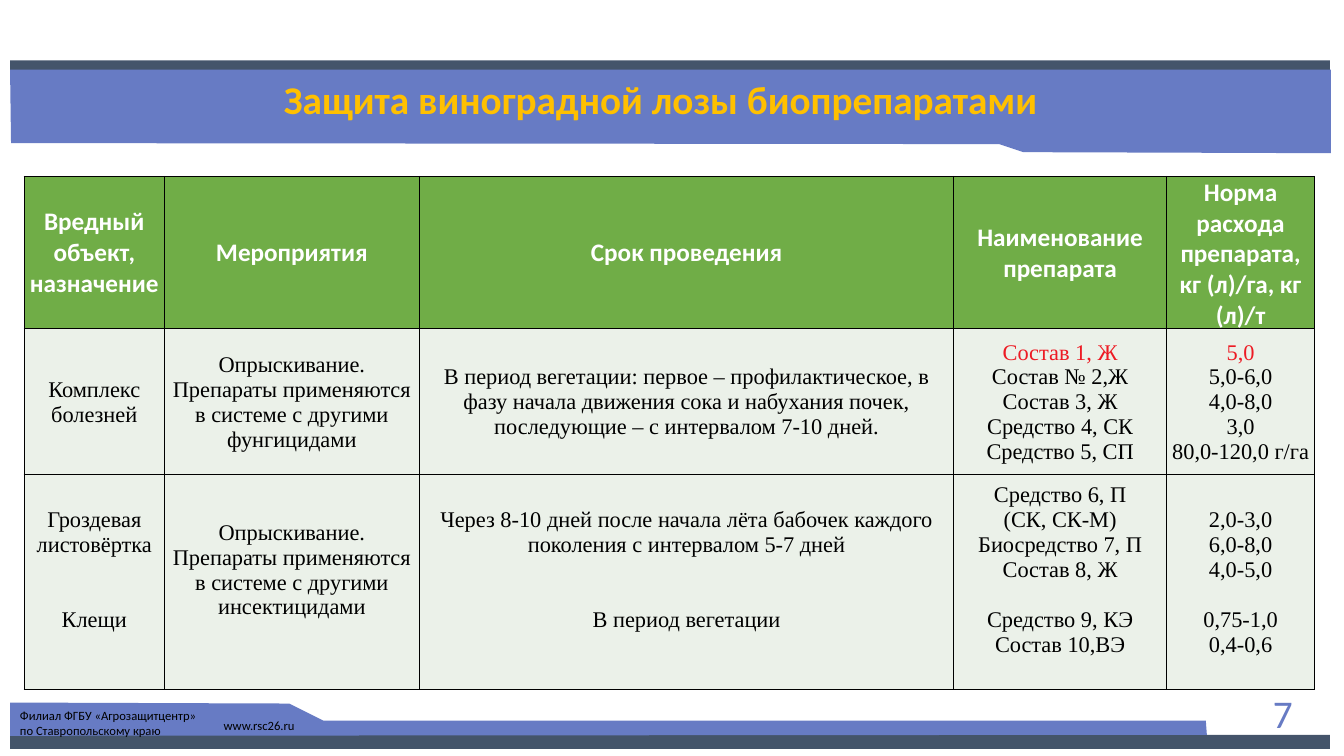
from lxml import etree
from pptx import Presentation
from pptx.dml.color import RGBColor
from pptx.enum.shapes import MSO_SHAPE
from pptx.enum.text import MSO_ANCHOR, PP_ALIGN
from pptx.oxml.ns import qn
from pptx.util import Inches, Pt

COLORS = {
    "dark": "44546A", "blue": "677BC4", "gold": "FFC000", "green": "70AD47",
    "pale": "EBF1E9", "red": "ED1B24", "black": "000000", "white": "FFFFFF",
}


def paint(shape, color):
    shape.fill.solid()
    shape.fill.fore_color.rgb = RGBColor.from_string(COLORS[color])
    shape.line.fill.background()
    shape.shadow.inherit = False


def write(frame, text, size, color, align=PP_ALIGN.LEFT, bold=False, face="Calibri"):
    frame.text = text
    for para in frame.paragraphs:
        para.alignment = align
        for run in para.runs:
            run.font.name = face
            run.font.size = Pt(size)
            run.font.bold = bold
            run.font.color.rgb = RGBColor.from_string(COLORS[color])


deck = Presentation()
deck.slide_width, deck.slide_height = Inches(13.33), Inches(7.5)
slide = deck.slides.add_slide(deck.slide_layouts[6])
shapes = slide.shapes

# Dark bars with blue bands
footer = [(0.1, 7.3), (11.97, 7.29), (11.96, 7.15), (3.21, 7.15), (2.87, 6.98), (0.1, 6.97)]
header = [(13.2, 0.69), (0.1, 0.69), (0.11, 1.42), (9.91, 1.43), (10.15, 1.51), (13.2, 1.52)]
bands = []
for top, points in [(7.29, footer), (0.6, header)]:
    bar = shapes.add_shape(MSO_SHAPE.RECTANGLE, Inches(0.1), Inches(top), Inches(13.09), Inches(0.14))
    paint(bar, "dark")
    spots = [(Inches(x), Inches(y)) for x, y in points]
    pen = shapes.build_freeform(*spots[0])
    pen.add_line_segments(spots[1:], close=True)
    band = pen.convert_to_shape()
    paint(band, "blue")
    bands.append(band)

# Footer text
frame = bands[0].text_frame
frame.vertical_anchor = MSO_ANCHOR.TOP
write(frame, "Филиал ФГБУ «Агрозащитцентр»\nпо Ставропольскому краю", 9, "black")

# Web address, page number and title
labels = [
    ("www.rsc26.ru", 2.12, 7.07, 0.91, 0.25, 9, "black", PP_ALIGN.LEFT, False),
    ("7", 9.42, 6.8, 3.5, 0.55, 28, "blue", PP_ALIGN.RIGHT, False),
    ("Защита виноградной лозы биопрепаратами", 2.67, 0.7, 7.76, 0.57, 28, "gold", PP_ALIGN.CENTER, True),
]
for text, left, top, width, height, size, color, align, bold in labels:
    box = shapes.add_textbox(Inches(left), Inches(top), Inches(width), Inches(height))
    box.text_frame.word_wrap = not bold
    box.text_frame.vertical_anchor = MSO_ANCHOR.MIDDLE
    write(box.text_frame, text, size, color, align, bold)

# Table content
rows = [
    ["Вредный объект, назначение", "Мероприятия", "Срок проведения", "Наименование препарата",
     "Норма расхода препарата, кг (л)/га, кг (л)/т"],
    ["Комплекс болезней",
     "Опрыскивание.\nПрепараты применяются\nв системе с другими фунгицидами",
     "В период вегетации: первое – профилактическое, в фазу начала движения сока "
     "и набухания почек, последующие – с интервалом 7-10 дней.",
     "Состав 1, Ж\nСостав № 2,Ж\nСостав 3, Ж\nСредство 4, СК\nСредство 5, СП",
     "5,0\n5,0-6,0\n4,0-8,0\n3,0\n80,0-120,0 г/га"],
    ["Гроздевая листовёртка\nКлещи",
     "Опрыскивание.\nПрепараты применяются\nв системе с другими инсектицидами",
     "Через 8-10 дней после начала лёта бабочек каждого поколения "
     "с интервалом 5-7 дней\nВ период вегетации",
     "Средство 6, П\n(СК, СК-М)\nБиосредство 7, П\nСостав 8, Ж\nСредство 9, КЭ\nСостав 10,ВЭ",
     "2,0-3,0\n6,0-8,0\n4,0-5,0\n0,75-1,0\n0,4-0,6"],
]
widths = [1.39, 2.53, 5.3, 2.11, 1.47]
heights = [1.49, 1.45, 2.13]
gaps = {"Клещи": 36, "В период вегетации": 36, "Средство 9, КЭ": 18, "0,75-1,0": 18}

# Table
table = shapes.add_table(3, 5, Inches(0.24), Inches(1.75), Inches(12.8), Inches(5.07)).table
table.horz_banding = False
for col, width in zip(table.columns, widths):
    col.width = Inches(width)
for row, height in zip(table.rows, heights):
    row.height = Inches(height)

for i, row in enumerate(rows):
    for j, text in enumerate(row):
        cell = table.cell(i, j)
        cell.vertical_anchor = MSO_ANCHOR.MIDDLE
        cell.margin_left = cell.margin_right = cell.margin_top = Inches(0.01)
        # The last row sits higher, except for the rates
        cell.margin_bottom = Inches(0.25 if i == 2 and j < 4 else 0)
        if i == 0:
            write(cell.text_frame, text, 18, "white", PP_ALIGN.CENTER, True)
        else:
            write(cell.text_frame, text, 16, "black", PP_ALIGN.CENTER, face="Times New Roman")
        for para in cell.text_frame.paragraphs:
            if para.text in gaps:
                para.space_before = Pt(gaps[para.text])
        if i == 1 and j > 2:
            first = cell.text_frame.paragraphs[0].runs[0]
            first.font.color.rgb = RGBColor.from_string(COLORS["red"])

        # Borders come before the fill in the cell XML
        props = cell._tc.get_or_add_tcPr()
        for side in ("a:lnL", "a:lnR", "a:lnT", "a:lnB"):
            line = etree.SubElement(props, qn(side), w=str(Pt(1)))
            solid = etree.SubElement(line, qn("a:solidFill"))
            etree.SubElement(solid, qn("a:srgbClr"), val=COLORS["black"])
        cell.fill.solid()
        cell.fill.fore_color.rgb = RGBColor.from_string(COLORS["pale" if i else "green"])

deck.save("out.pptx")
